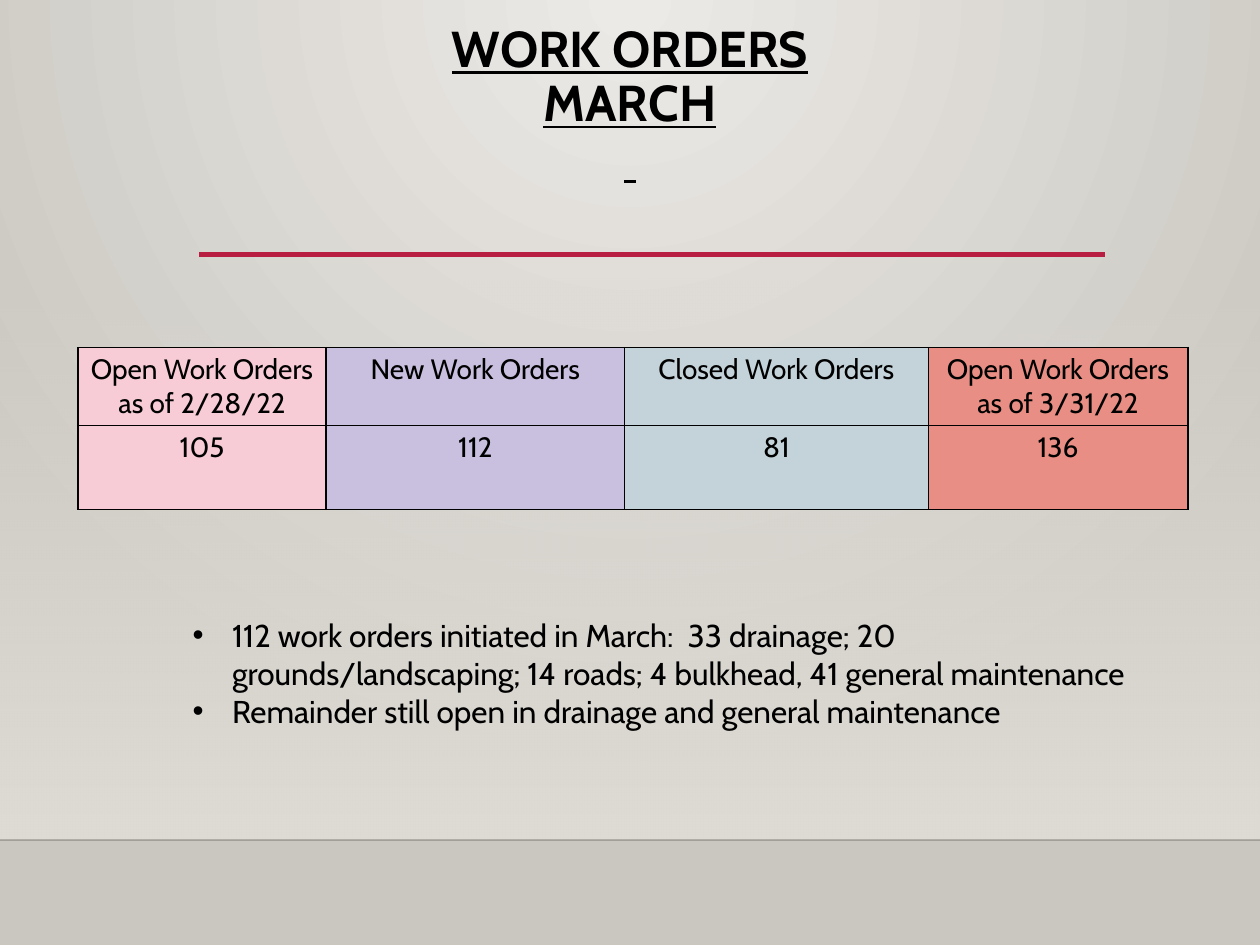
import dataclasses

import lxml.etree
import pptx
import pptx.dml.color
import pptx.enum.shapes
import pptx.enum.text
import pptx.oxml
import pptx.oxml.ns
import pptx.util

Pt = pptx.util.Pt
RGBColor = pptx.dml.color.RGBColor
ALIGN = pptx.enum.text.PP_ALIGN
ANCHOR = pptx.enum.text.MSO_ANCHOR
qn = pptx.oxml.ns.qn

FONT = "Cabin"
BLACK = RGBColor(0x00, 0x00, 0x00)
CRIMSON = RGBColor(0xB7, 0x1E, 0x42)
PALE = RGBColor(0xEC, 0xEA, 0xE7)
STONE = RGBColor(0xCA, 0xC7, 0xC1)
WALL = RGBColor(0xDF, 0xDB, 0xD5)
PINK = RGBColor(0xF7, 0xCC, 0xD6)
LILAC = RGBColor(0xC9, 0xBF, 0xDF)
BLUE_GREY = RGBColor(0xC3, 0xD3, 0xD9)
CORAL = RGBColor(0xE8, 0x8E, 0x84)

PAGE_WIDTH, PAGE_HEIGHT = 720, 540
FLOOR_TOP = 480
ROW_HEIGHTS = (44, 48)


@dataclasses.dataclass
class Column:
    heading: str
    count: str
    width: float
    color: RGBColor


@dataclasses.dataclass
class Rule:
    left: float
    right: float
    top: float
    width: float
    color: RGBColor
    opacity: int = 100


COLUMNS = [
    Column("Open Work Orders as of 2/28/22", "105", 141.8, PINK),
    Column("New Work Orders", "112", 170.6, LILAC),
    Column("Closed Work Orders", "81", 173.5, BLUE_GREY),
    Column("Open Work Orders as of 3/31/22", "136", 148.3, CORAL),
]
RULES = [
    Rule(0, PAGE_WIDTH, FLOOR_TOP, 1, BLACK, opacity=20),
    Rule(113.8, 631.4, 145.4, 2.5, CRIMSON),
]
NOTES = [
    "112 work orders initiated in March:  33 drainage; 20 grounds/landscaping; "
    "14 roads; 4 bulkhead, 41 general maintenance",
    "Remainder still open in drainage and general maintenance",
]


def set_gradient(parent, start: RGBColor, end: RGBColor, direction: str,
                 start_opacity: int = 100) -> None:
    """Replace the solid fill inside parent with a two-stop gradient."""
    gradient = pptx.oxml.parse_xml(
        f'<a:gradFill {pptx.oxml.ns.nsdecls("a")} rotWithShape="1"><a:gsLst>'
        f'<a:gs pos="0"><a:srgbClr val="{start}">'
        f'<a:alpha val="{start_opacity * 1000}"/></a:srgbClr></a:gs>'
        f'<a:gs pos="100000"><a:srgbClr val="{end}"/></a:gs>'
        f'</a:gsLst>{direction}</a:gradFill>')
    solid = parent.find(qn("a:solidFill"))
    parent.replace(solid, gradient)


def style_font(font, size: float) -> None:
    font.name = FONT
    font.size = Pt(size)
    font.color.rgb = BLACK


def draw_backdrop(page) -> None:
    page.background.fill.solid()
    page.background.fill.fore_color.rgb = STONE
    set_gradient(
        page.background._cSld.bg.bgPr, PALE, STONE,
        '<a:path path="circle">'
        '<a:fillToRect l="43000" r="43000" b="100000"/></a:path>')
    wall = page.shapes.add_shape(
        pptx.enum.shapes.MSO_SHAPE.RECTANGLE,
        Pt(0), Pt(158.4), Pt(PAGE_WIDTH), Pt(FLOOR_TOP - 158.4))
    wall.shadow.inherit = False
    wall.line.fill.background()
    wall.fill.solid()
    set_gradient(wall._element.spPr, WALL, WALL,
                 '<a:lin ang="5400000" scaled="0"/>', start_opacity=0)


def draw_rule(page, rule: Rule) -> None:
    line = page.shapes.add_connector(
        pptx.enum.shapes.MSO_CONNECTOR.STRAIGHT,
        Pt(rule.left), Pt(rule.top), Pt(rule.right), Pt(rule.top))
    line.line.width = Pt(rule.width)
    line.line.color.rgb = rule.color
    properties = line._element.spPr
    if rule.opacity < 100:
        color = properties.find(".//" + qn("a:srgbClr"))
        lxml.etree.SubElement(color, qn("a:alpha"), val=str(rule.opacity * 1000))
    lxml.etree.SubElement(properties, qn("a:effectLst"))


def write_title(page) -> None:
    title = page.shapes.title
    title.left, title.top, title.width, title.height = (
        Pt(49.7), Pt(10), Pt(620.6), Pt(43.2))
    frame = title.text_frame
    frame.word_wrap = True
    frame.auto_size = pptx.enum.text.MSO_AUTO_SIZE.NONE
    frame.vertical_anchor = ANCHOR.TOP
    frame.text = "WORK ORDERS\vMARCH\v "
    para = frame.paragraphs[0]
    para.alignment = ALIGN.CENTER
    para.line_spacing = 0.9
    style_font(para.font, 28.8)
    para.font.bold = True
    para.font.underline = True


def border_cell(cell) -> None:
    properties = cell._tc.get_or_add_tcPr()
    for position, side in enumerate(("lnL", "lnR", "lnT", "lnB")):
        properties.insert(position, pptx.oxml.parse_xml(
            f'<a:{side} {pptx.oxml.ns.nsdecls("a")} w="{Pt(1)}"><a:solidFill>'
            f'<a:srgbClr val="{BLACK}"/></a:solidFill></a:{side}>'))


def fill_cell(cell, text: str, color: RGBColor) -> None:
    cell.fill.solid()
    cell.fill.fore_color.rgb = color
    border_cell(cell)
    cell.margin_left = cell.margin_right = Pt(5)
    cell.margin_top = cell.margin_bottom = Pt(2.9)
    cell.text = text
    para = cell.text_frame.paragraphs[0]
    para.alignment = ALIGN.CENTER
    style_font(para.font, 16)


def draw_table(page, columns: list[Column]) -> None:
    table = page.shapes.add_table(
        len(ROW_HEIGHTS), len(columns), Pt(44.6), Pt(198.7),
        Pt(sum(column.width for column in columns)), Pt(sum(ROW_HEIGHTS))).table
    table.first_row = False
    table.horz_banding = False
    for row, height in zip(table.rows, ROW_HEIGHTS):
        row.height = Pt(height)
    for index, column in enumerate(columns):
        table.columns[index].width = Pt(column.width)
        for row_index, text in enumerate((column.heading, column.count)):
            fill_cell(table.cell(row_index, index), text, column.color)


def write_notes(page, notes: list[str]) -> None:
    box = page.shapes.add_textbox(Pt(103), Pt(348.5), Pt(549.4), Pt(72.7))
    frame = box.text_frame
    frame.word_wrap = True
    frame.auto_size = pptx.enum.text.MSO_AUTO_SIZE.SHAPE_TO_FIT_TEXT
    frame.text = "\n".join(notes)
    for para in frame.paragraphs:
        properties = para._p.get_or_add_pPr()
        properties.set("marL", str(Pt(22.5)))
        properties.set("indent", str(-Pt(22.5)))
        lxml.etree.SubElement(properties, qn("a:buFont"), typeface="Arial")
        lxml.etree.SubElement(properties, qn("a:buChar"), char="•")
        style_font(para.font, 18)


def main() -> None:
    deck = pptx.Presentation()
    deck.slide_width, deck.slide_height = Pt(PAGE_WIDTH), Pt(PAGE_HEIGHT)
    page = deck.slides.add_slide(deck.slide_layouts.get_by_name("Title Only"))

    # Backdrop and rules
    draw_backdrop(page)
    for rule in RULES:
        draw_rule(page, rule)

    # Content
    write_title(page)
    draw_table(page, COLUMNS)
    write_notes(page, NOTES)
    deck.save("out.pptx")


if __name__ == "__main__":
    main()
